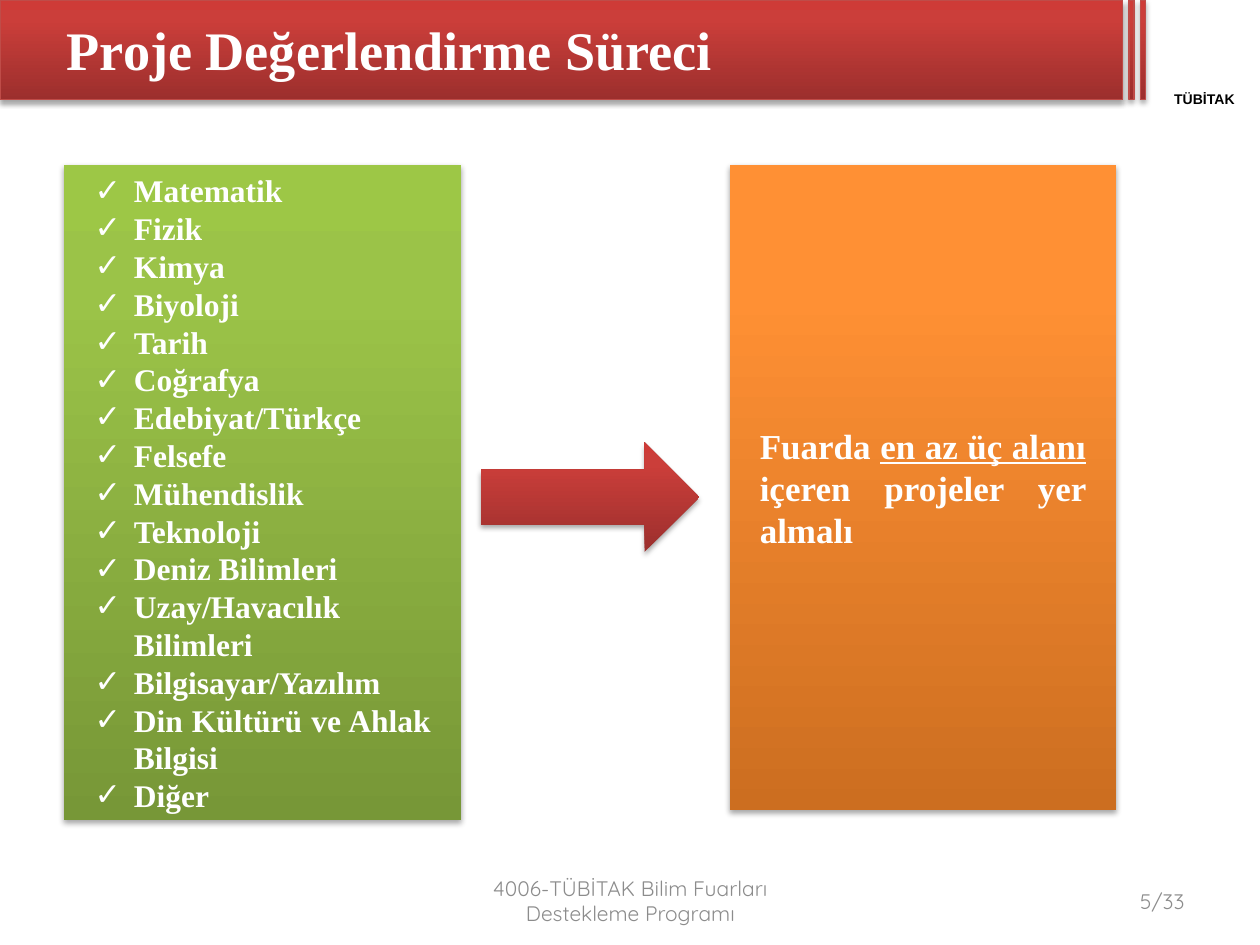
from dataclasses import dataclass
from typing import Optional

import pptx
import pptx.dml.color
import pptx.enum.shapes
import pptx.enum.text
import pptx.oxml
import pptx.oxml.ns
import pptx.util

Pt = pptx.util.Pt
Align = pptx.enum.text.PP_ALIGN
Anchor = pptx.enum.text.MSO_ANCHOR
Preset = pptx.enum.shapes.MSO_SHAPE

COLORS = {"white": "FFFFFF", "black": "000000", "gray": "8C8C8C", "red_line": "BF4C48"}
# Each gradient runs from the bottom (0 %) to the top (100 %)
GRADIENTS = {
    "red": ("9C2F2D", "CB3E3A", "CE3B37"),
    "green": ("779737", "9BC348", "9DC746"),
    "orange": ("CC6E20", "FF9034", "FF9136"),
}
STOPS = (0, 80, 100)
SERIF = "Times New Roman"
SUBJECTS = [
    "Matematik", "Fizik", "Kimya", "Biyoloji", "Tarih", "Coğrafya",
    "Edebiyat/Türkçe", "Felsefe", "Mühendislik", "Teknoloji", "Deniz Bilimleri",
    "Uzay/Havacılık Bilimleri", "Bilgisayar/Yazılım",
    "Din Kültürü ve Ahlak Bilgisi", "Diğer",
]


@dataclass
class Box:
    """Position and size in points."""
    left: float
    top: float
    width: float
    height: float

    def place(self, shape) -> None:
        shape.left, shape.top = Pt(self.left), Pt(self.top)
        shape.width, shape.height = Pt(self.width), Pt(self.height)

    def lengths(self) -> tuple:
        return Pt(self.left), Pt(self.top), Pt(self.width), Pt(self.height)


@dataclass
class Block:
    box: Box
    gradient: str
    preset: int = Preset.RECTANGLE
    line: Optional[str] = None


HEADER_BLOCKS = [
    Block(Box(left, 0, width, 56.9), "red", line="red_line")
    for left, width in ((0, 641.5), (645.1, 2.9), (651.6, 2.9))
]
ARROW = Block(Box(275, 252.8, 124.6, 62.5), "red", Preset.RIGHT_ARROW)
RULE_PANEL = Block(Box(416.9, 94.3, 221, 368.6), "orange")
LIST_BOX = Box(36.7, 94.3, 226.8, 374.4)


def parse_element(tag: str, attributes: str = "", content: str = ""):
    namespace = pptx.oxml.ns.nsdecls("a")
    return pptx.oxml.parse_xml(f"<a:{tag} {namespace} {attributes}>{content}</a:{tag}>")


def gradient_element(name: str):
    stops = "".join(
        f'<a:gs pos="{stop * 1000}"><a:srgbClr val="{color}"/></a:gs>'
        for stop, color in zip(STOPS, GRADIENTS[name])
    )
    return parse_element("gradFill", 'rotWithShape="1"',
                         f'<a:gsLst>{stops}</a:gsLst><a:lin ang="16200000" scaled="0"/>')


def shadow_element():
    return parse_element(
        "effectLst", "",
        f'<a:outerShdw blurRad="{Pt(3.1)}" dist="{Pt(1.8)}" dir="5400000" rotWithShape="0">'
        f'<a:srgbClr val="{COLORS["black"]}"><a:alpha val="35000"/></a:srgbClr></a:outerShdw>')


def style_panel(shape, gradient: str, line: Optional[str] = None) -> None:
    """Give a shape its gradient, outline and shadow."""
    if line:
        shape.line.color.rgb = pptx.dml.color.RGBColor.from_string(COLORS[line])
        shape.line.width = Pt(0.75)
    else:
        shape.line.fill.background()
    properties = shape._element.spPr
    properties.find(pptx.oxml.ns.qn("a:ln")).addprevious(gradient_element(gradient))
    properties.append(shadow_element())


def add_block(slide, block: Block):
    shape = slide.shapes.add_shape(block.preset, *block.box.lengths())
    shape.shadow.inherit = False
    properties = shape._element.spPr
    properties.remove(properties.find(pptx.oxml.ns.qn("a:effectLst")))
    style_panel(shape, block.gradient, block.line)
    return shape


def write_text(shape, paragraphs: list, *, size: float, font: str = SERIF,
               color: str = "white", bold: bool = False, align=Align.LEFT,
               margins: tuple = (7.2, 3.6), bullet: str = "",
               line_height: Optional[float] = None) -> None:
    """Write paragraphs; each is a string or a list of (text, underlined) runs."""
    frame = shape.text_frame
    frame.word_wrap = True
    frame.auto_size = pptx.enum.text.MSO_AUTO_SIZE.NONE
    frame.vertical_anchor = Anchor.MIDDLE
    frame.margin_left = frame.margin_right = Pt(margins[0])
    frame.margin_top = frame.margin_bottom = Pt(margins[1])
    for index, content in enumerate(paragraphs):
        paragraph = frame.add_paragraph() if index else frame.paragraphs[0]
        paragraph.alignment = align
        paragraph.space_before = Pt(0)
        if line_height:
            paragraph.line_spacing = Pt(line_height)
        if bullet:
            properties = paragraph._p.get_or_add_pPr()
            properties.set("marL", str(Pt(22.5)))
            properties.set("indent", str(Pt(-22.5)))
            properties.append(parse_element("buFont", 'typeface="Arial"'))
            properties.append(parse_element("buChar", f'char="{bullet}"'))
        runs = [(content, False)] if isinstance(content, str) else content
        for text, underlined in runs:
            run = paragraph.add_run()
            run.text = text
            run.font.name, run.font.size, run.font.bold = font, Pt(size), bold
            run.font.underline = underlined
            run.font.color.rgb = pptx.dml.color.RGBColor.from_string(COLORS[color])


def add_label(slide, box: Box, text: str, **text_format) -> None:
    write_text(slide.shapes.add_textbox(*box.lengths()), [text], **text_format)


def main() -> None:
    presentation = pptx.Presentation()
    presentation.slide_width, presentation.slide_height = Pt(720), Pt(540)
    slide = presentation.slides.add_slide(presentation.slide_layouts[1])
    title, subject_list = slide.placeholders[0], slide.placeholders[1]

    # Header bar with its two stripes, then the title above them
    for block in HEADER_BLOCKS:
        add_block(slide, block)
    Box(31, 0, 612, 55.4).place(title)
    write_text(title, ["Proje Değerlendirme Süreci"], size=31, bold=True)
    slide.shapes._spTree.append(title._element)
    add_label(slide, Box(651.6, 51.8, 73.4, 9.4), "TÜBİTAK", size=8, font="Arial",
              color="black", bold=True, align=Align.CENTER, margins=(0, 0))

    # Subject list
    LIST_BOX.place(subject_list)
    style_panel(subject_list, "green")
    write_text(subject_list, SUBJECTS, size=18, bold=True, align=Align.JUSTIFY,
               margins=(17.3, 15.1), bullet="✓", line_height=21.6)

    # Arrow to the rule
    add_block(slide, ARROW)
    rule = [("Fuarda ", False), ("en az üç alanı ", True),
            ("içeren projeler yer almalı", False)]
    write_text(add_block(slide, RULE_PANEL), [rule], size=20, bold=True,
               align=Align.JUSTIFY, margins=(17.3, 15.1), line_height=24)

    # Footer
    footer_format = {"size": 12, "font": "Quicksand", "color": "gray"}
    add_label(slide, Box(246.2, 500.4, 228.2, 28.8),
              "4006-TÜBİTAK Bilim Fuarları Destekleme Programı",
              align=Align.CENTER, **footer_format)
    add_label(slide, Box(516.2, 500.4, 167.8, 28.8), "5/33",
              align=Align.RIGHT, **footer_format)

    presentation.save("out.pptx")


if __name__ == "__main__":
    main()
